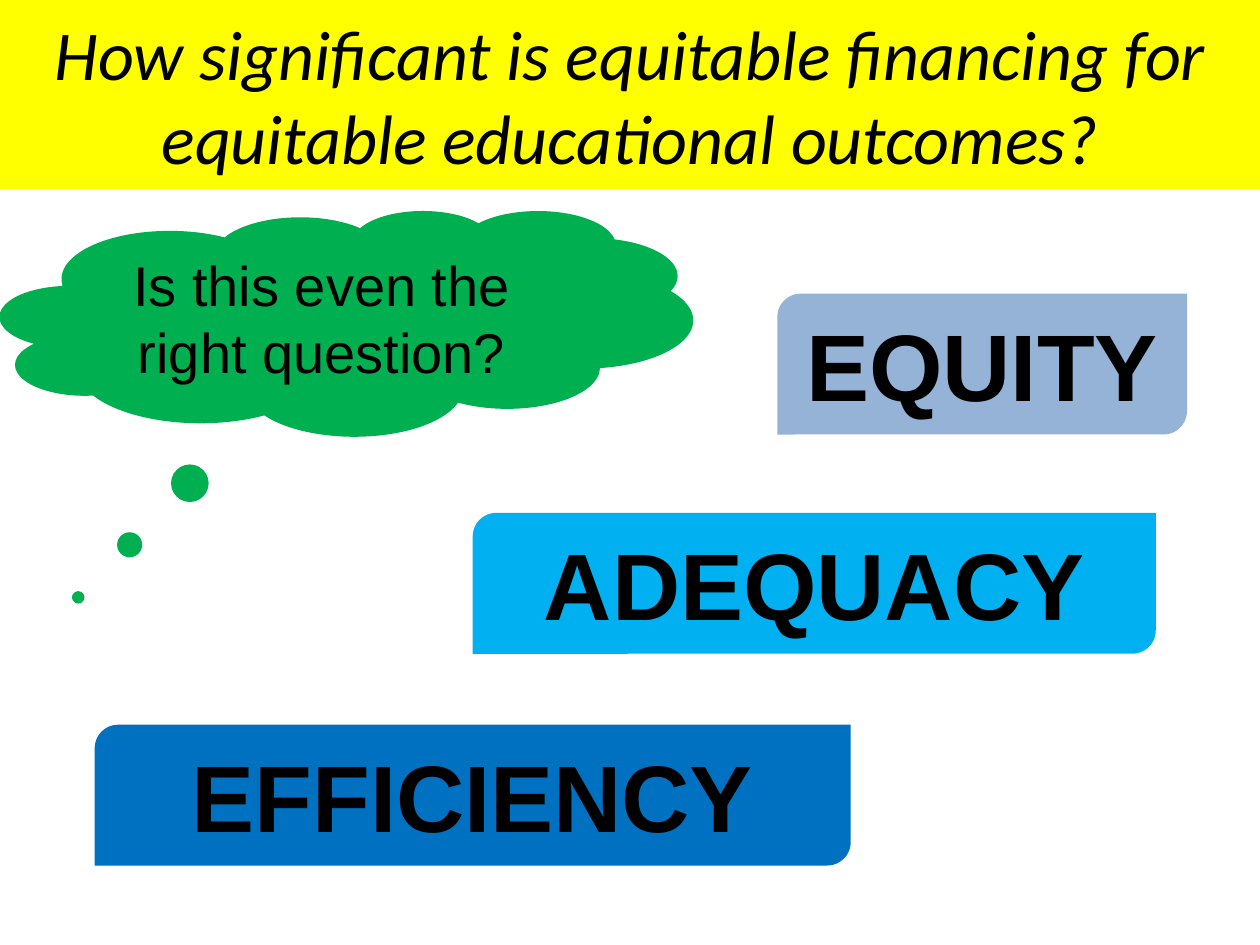
"""Builds a slide that questions equitable financing in education."""
from pptx import Presentation
from pptx import util as u
from pptx.dml.color import RGBColor
from pptx.enum import shapes, text


def colour(hex_code):
    """Turn a hex string into a colour."""
    return RGBColor.from_string(hex_code)


def add_panel(slide, preset, box, fill, wording, size, font="Arial", bold=False, italic=False):
    """Place a filled preset shape with centred black text in a box given in centimetres."""
    panel = slide.shapes.add_shape(preset, *(u.Cm(length) for length in box))
    panel.shadow.inherit = False
    panel.fill.solid()
    panel.fill.fore_color.rgb = colour(fill)
    panel.line.fill.background()
    frame = panel.text_frame
    frame.word_wrap = True
    frame.vertical_anchor = text.MSO_ANCHOR.TOP
    frame.auto_size = text.MSO_AUTO_SIZE.SHAPE_TO_FIT_TEXT
    paragraph = frame.paragraphs[0]
    paragraph.text = wording
    paragraph.alignment = text.PP_ALIGN.CENTER
    paragraph.font.name = font
    paragraph.font.size = u.Pt(size)
    paragraph.font.bold = bold
    paragraph.font.italic = italic
    paragraph.font.color.rgb = colour("000000")
    return panel


def add_heading(slide, box):
    """Fill the box with the yellow heading band."""
    heading = add_panel(
        slide, shapes.MSO_SHAPE.RECTANGLE, box, "FFFF00",
        "How significant is equitable financing for equitable educational outcomes?",
        40, font="Calibri", italic=True)
    heading.text_frame.auto_size = text.MSO_AUTO_SIZE.NONE
    heading.text_frame.vertical_anchor = text.MSO_ANCHOR.MIDDLE


def add_thought(slide, box):
    """Place the thought cloud, its bubbles trailing to the lower left."""
    thought = add_panel(
        slide, shapes.MSO_SHAPE.CLOUD_CALLOUT, box, "00B050",
        "Is this even the right question?", 32)
    thought.adjustments[0] = -0.387
    thought.adjustments[1] = 1.215


def add_steps(slide, box):
    """Place the three principles as steps that climb to the right within the box."""
    left, top, _, _ = box
    step_height = 2.84
    steps = [
        ("EQUITY", "95B3D7", 13.76, 0, 8.26),
        ("ADEQUACY", "00B0F0", 7.62, 4.42, 13.77),
        ("EFFICIENCY", "0070C0", 0, 8.69, 15.24),
    ]
    for principle, fill, indent, drop, width in steps:
        add_panel(
            slide, shapes.MSO_SHAPE.ROUND_2_DIAG_RECTANGLE,
            (left + indent, top + drop, width, step_height),
            fill, principle, 54, bold=True)


def main():
    """Build and save the slide."""
    deck = Presentation()
    deck.slide_width, deck.slide_height = u.Cm(25.4), u.Cm(19.05)
    slide = deck.slides.add_slide(deck.slide_layouts[6])
    add_heading(slide, (0, 0, 25.4, 3.81))
    add_thought(slide, (0, 4.24, 13.97, 4.55))
    add_steps(slide, (1.91, 5.92, 22.02, 11.53))
    deck.save("out.pptx")


if __name__ == "__main__":
    main()
